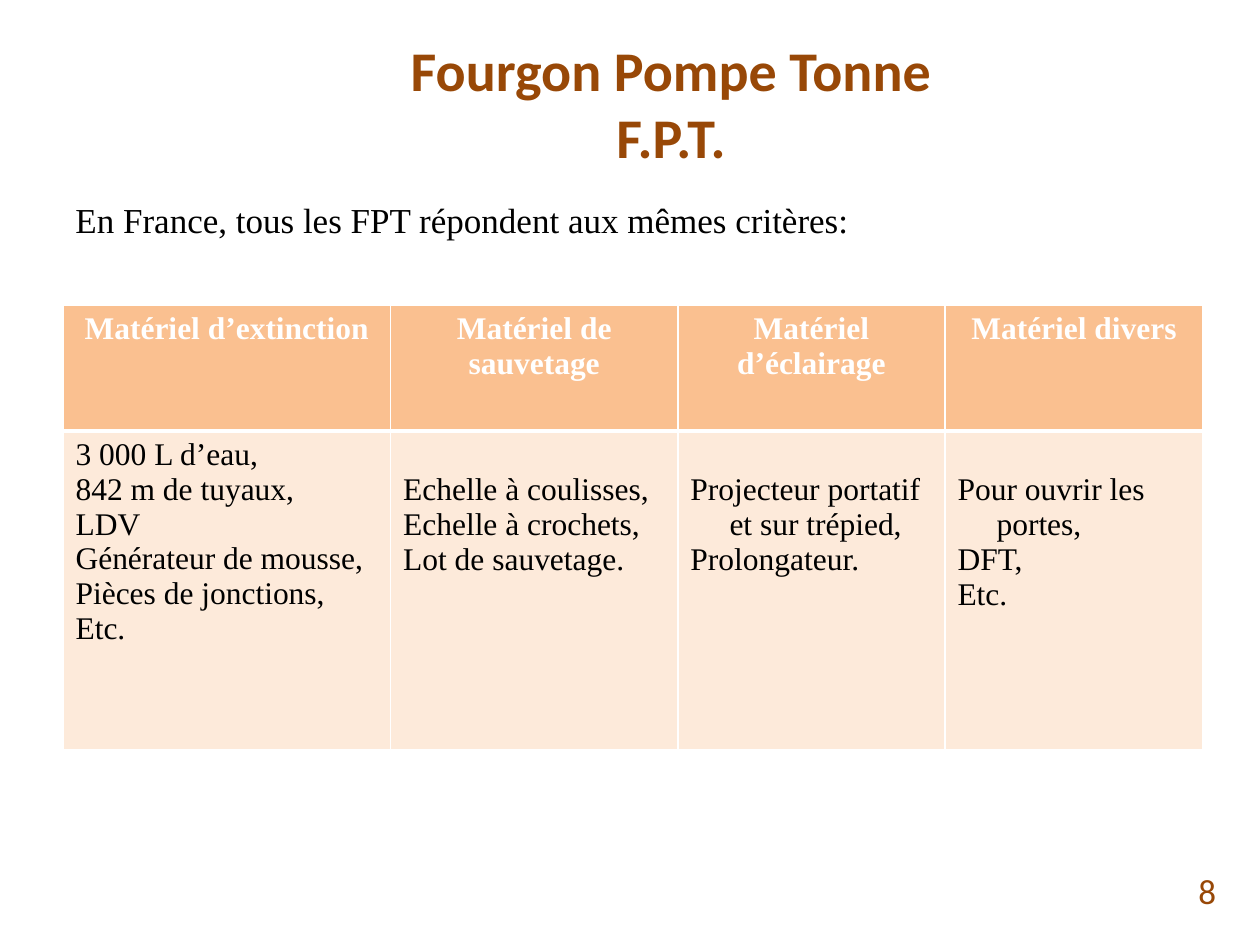
from lxml import etree
from pptx import Presentation
from pptx.dml.color import RGBColor
from pptx.enum import text
from pptx.oxml import ns
from pptx.util import Inches, Pt

SANS, SERIF = "Calibri", "Times New Roman"
BROWN, BLACK, WHITE = "984807", "000000", "FFFFFF"
HEADER_FILL, BODY_FILL = "FAC090", "FDEADA"
LEFT, CENTER, RIGHT, JUSTIFY = (
    text.PP_ALIGN.LEFT, text.PP_ALIGN.CENTER, text.PP_ALIGN.RIGHT, text.PP_ALIGN.JUSTIFY)
MIDDLE, TOP = text.MSO_ANCHOR.MIDDLE, text.MSO_ANCHOR.TOP

TITLE = ["Fourgon Pompe Tonne", "F.P.T."]
INTRO = "En France, tous les FPT répondent aux mêmes critères:"
PAGE_NUMBER = "8"
# heading, column width, top margin of the list, list
EQUIPMENT = [
    ("Matériel d’extinction", 2.6, 0.05,
     ["3 000 L d’eau,", "842 m de tuyaux,", "LDV", "Générateur de mousse,",
      "Pièces de jonctions,", "Etc."]),
    ("Matériel de sauvetage", 2.28, 0.33,
     ["Echelle à coulisses,", "Echelle à crochets,", "Lot de sauvetage."]),
    ("Matériel d’éclairage", 2.12, 0.33,
     ["Projecteur portatif et sur trépied,", "Prolongateur."]),
    ("Matériel divers", 2.05, 0.33,
     ["Pour ouvrir les portes,", "DFT,", "Etc."]),
]
ROW_HEIGHTS = [1, 2.53]
HANGING = 0.31


def color(value):
    return RGBColor.from_string(value)


def add_span(para, words, size, font, ink, bold=False):
    span = para.add_run()
    span.text = words
    span.font.size = Pt(size)
    span.font.name = font
    span.font.bold = bold
    span.font.color.rgb = color(ink)


def add_box(page, place, lines, align, anchor, size, font, ink, bold=False):
    """Add a text box whose lines are parted by line breaks; return its paragraph."""
    frame = page.shapes.add_textbox(*map(Inches, place)).text_frame
    frame.word_wrap = True
    frame.vertical_anchor = anchor
    para = frame.paragraphs[0]
    para.alignment = align
    for number, line in enumerate(lines):
        if number:
            para.add_line_break()
        add_span(para, line, size, font, ink, bold)
    return para


def set_borders(cell, widths):
    """Draw white borders; widths are points for left, right, top, bottom."""
    properties = cell._tc.get_or_add_tcPr()
    for position, (side, width) in enumerate(zip("LRTB", widths)):
        line = etree.Element(ns.qn(f"a:ln{side}"), w=str(Pt(width)))
        fill = etree.SubElement(line, ns.qn("a:solidFill"))
        etree.SubElement(fill, ns.qn("a:srgbClr"), val=WHITE)
        properties.insert(position, line)


def fill_cell(cell, lines, fill, ink, align, bold, indent, borders):
    cell.fill.solid()
    cell.fill.fore_color.rgb = color(fill)
    set_borders(cell, borders)
    frame = cell.text_frame
    for number, line in enumerate(lines):
        para = frame.add_paragraph() if number else frame.paragraphs[0]
        para.alignment = align
        if indent:
            properties = para._p.get_or_add_pPr()
            properties.set("marL", str(Inches(indent)))
            properties.set("indent", str(-Inches(indent)))
        add_span(para, line, 18, SERIF, ink, bold)


def add_equipment_table(page):
    widths = [column[1] for column in EQUIPMENT]
    table = page.shapes.add_table(
        len(ROW_HEIGHTS), len(EQUIPMENT), Inches(0.5), Inches(2.42),
        Inches(sum(widths)), Inches(sum(ROW_HEIGHTS))).table
    for row, height in zip(table.rows, ROW_HEIGHTS):
        row.height = Inches(height)
    for index, (heading, width, margin, items) in enumerate(EQUIPMENT):
        table.columns[index].width = Inches(width)
        fill_cell(table.cell(0, index), [heading], HEADER_FILL, WHITE, CENTER,
                  True, 0, (1, 1, 1, 3))
        body = table.cell(1, index)
        body.margin_top = Inches(margin)
        fill_cell(body, items, BODY_FILL, BLACK, LEFT, False, HANGING, (1, 1, 3, 1))


def main():
    deck = Presentation()
    deck.slide_width, deck.slide_height = Inches(10), Inches(7.5)
    page = deck.slides.add_slide(deck.slide_layouts[6])
    add_box(page, (0.9, 0.3, 8.85, 1.03), TITLE, CENTER, MIDDLE, 32, SANS, BROWN, True)
    add_box(page, (7.42, 6.87, 2.33, 0.4), [PAGE_NUMBER], RIGHT, MIDDLE, 20, SANS, BROWN)
    add_equipment_table(page)
    intro = add_box(page, (0.5, 1.5, 6.62, 0.46), [INTRO], JUSTIFY, TOP, 20, SERIF, BLACK)
    intro.line_spacing = 1.07
    deck.save("out.pptx")


if __name__ == "__main__":
    main()
